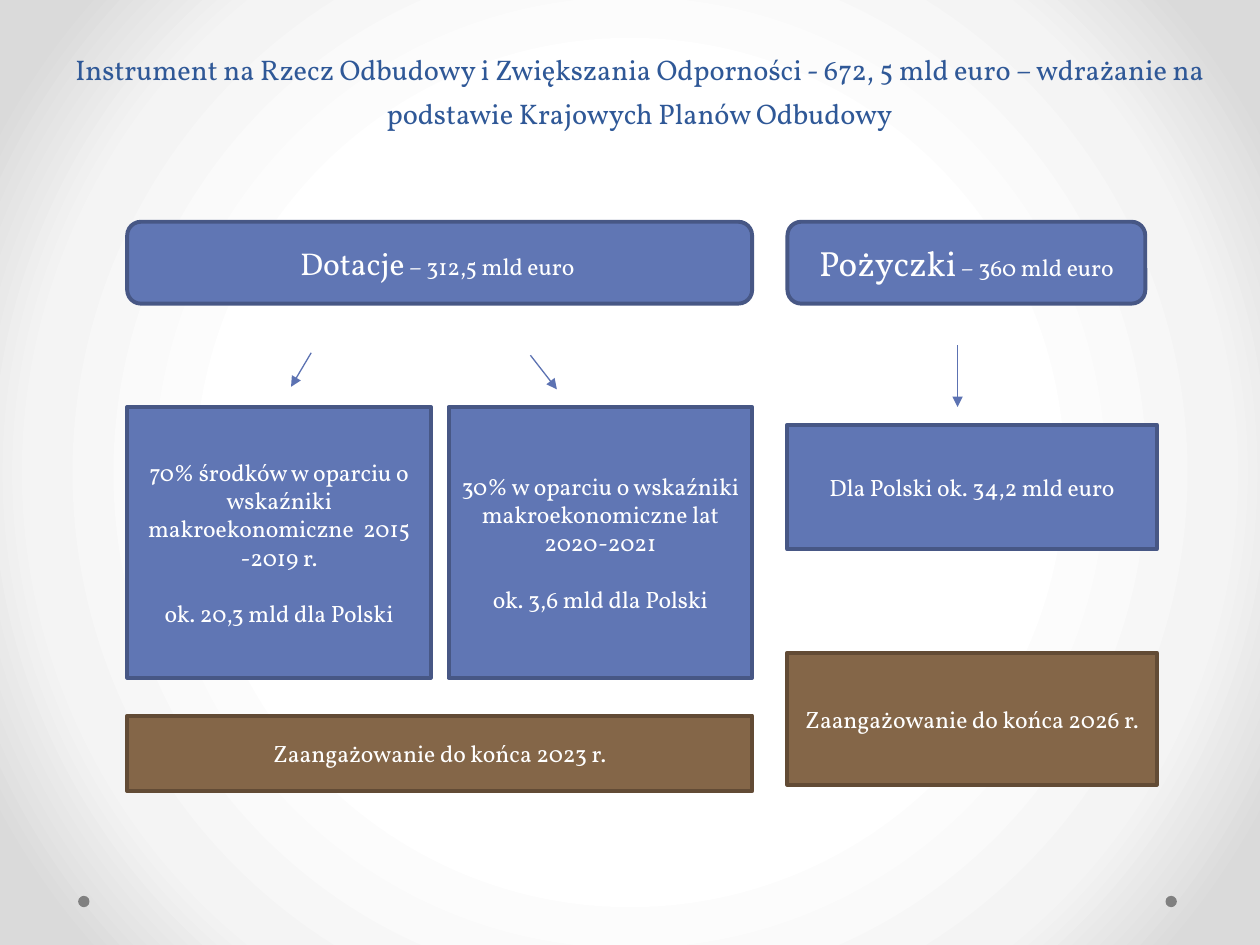
from pptx import Presentation
from pptx.dml.color import RGBColor
from pptx.enum.shapes import MSO_CONNECTOR as Conn, MSO_SHAPE as Shape
from pptx.enum.text import MSO_ANCHOR as Anchor, PP_ALIGN as Align
from pptx.oxml import parse_xml
from pptx.oxml.ns import nsdecls, qn
from pptx.util import Inches, Pt

BLUE, BLUE_EDGE = RGBColor(0x60, 0x76, 0xB4), RGBColor(0x47, 0x57, 0x85)
BROWN, BROWN_EDGE = RGBColor(0x84, 0x66, 0x48), RGBColor(0x62, 0x4B, 0x35)
ARROW = RGBColor(0x5C, 0x72, 0xB2)
TITLE = RGBColor(0x2F, 0x58, 0x97)
WHITE = RGBColor(0xFF, 0xFF, 0xFF)
GREY = RGBColor(0x80, 0x80, 0x80)
BG_STOPS = [(50, WHITE), (76, RGBColor(0xF4, 0xF4, 0xF4)),
            (92, RGBColor(0xDA, 0xDA, 0xDA))]
COLS, ROWS = 100, 75


class Deck:
    """Holds the style and the current slide; places are grid columns and rows."""
    font, size = "Vollkorn", 13.5

    def __init__(self, prs):
        self.s = prs.slides.add_slide(prs.slide_layouts[6])
        self.col, self.row = prs.slide_width / COLS, prs.slide_height / ROWS

    def grid(self, x, y, w, h):
        return [round(n * unit) for n, unit in
                zip((x, y, w, h), (self.col, self.row) * 2)]

    def background(self, stops):
        fill = self.s.background.fill
        fill.gradient()
        old = next(self.s.element.iter(qn("a:gradFill")))
        gs = "".join(f'<a:gs pos="{pos * 1000}"><a:srgbClr val="{c}"/></a:gs>'
                     for pos, c in stops)
        old.getparent().replace(old, parse_xml(
            f'<a:gradFill {nsdecls("a")} rotWithShape="1"><a:gsLst>{gs}</a:gsLst>'
            '<a:path path="circle"><a:fillToRect l="50000" t="50000" '
            'r="50000" b="50000"/></a:path></a:gradFill>'))

    def text(self, sp, paras, color=WHITE, anchor=Anchor.MIDDLE, **fmt):
        """Each paragraph is a list of (text, size) runs."""
        tf = sp.text_frame
        tf.word_wrap, tf.vertical_anchor = True, anchor
        for i, runs in enumerate(paras):
            p = tf.add_paragraph() if i else tf.paragraphs[0]
            # one line of air between paragraphs
            for key, value in {"alignment": Align.CENTER,
                               "space_before": Pt(16.2 if i else 0), **fmt}.items():
                setattr(p, key, value)
            for text, size in runs:
                r = p.add_run()
                r.text = text
                r.font.color.rgb = color
                for key, value in {"name": self.font, "size": Pt(size)}.items():
                    setattr(r.font, key, value)

    def title(self, at, text):
        sp = self.s.shapes.add_textbox(*self.grid(*at))
        self.text(sp, [[(text, 16.2)]], TITLE, Anchor.BOTTOM, line_spacing=Pt(25))

    def shape(self, kind, at, fill, edge=None):
        sp = self.s.shapes.add_shape(kind, *self.grid(*at))
        sp.shadow.inherit = False
        sp.fill.solid()
        sp.fill.fore_color.rgb = fill
        if edge is None:
            sp.line.fill.background()
        else:
            sp.line.color.rgb, sp.line.width = edge, Pt(2.25)
        return sp

    def box(self, at, *lines, colors=(BLUE, BLUE_EDGE)):
        self.text(self.shape(Shape.RECTANGLE, at, *colors),
                  [[(line, self.size)] for line in lines])

    def header(self, at, name, size, amount):
        self.text(self.shape(Shape.ROUNDED_RECTANGLE, at, BLUE, BLUE_EDGE),
                  [[(name, size), (amount, self.size)]])

    def arrow(self, *ends):
        c = self.s.shapes.add_connector(Conn.STRAIGHT, *self.grid(*ends))
        c.line.color.rgb, c.line.width = ARROW, Pt(0.75)
        sp_pr = c.element.spPr
        sp_pr.find(qn("a:ln")).append(
            parse_xml(f'<a:tailEnd {nsdecls("a")} type="triangle"/>'))
        sp_pr.append(parse_xml(f'<a:effectLst {nsdecls("a")}/>'))


def main():
    prs = Presentation()
    prs.slide_width, prs.slide_height = Inches(10), Inches(7.5)
    d = Deck(prs)
    brown = (BROWN, BROWN_EDGE)

    # Backdrop with two corner dots
    d.background(BG_STOPS)
    for x in (6.2, 92.5):
        d.shape(Shape.OVAL, (x, 71.1, 0.9, 0.9), GREY)

    d.title((2.8, 2.9, 95.9, 7.9),
            "Instrument na Rzecz Odbudowy i Zwiększania Odporności - 672, 5 mld euro "
            "– wdrażanie na podstawie Krajowych Planów Odbudowy")

    # Left and right branches share these edges
    grants_x, grants_w, half_w = 10.1, 49.6, 24.1
    loans_x, loans_w = 62.5, 29.3
    head_y, head_h = 17.6, 6.5

    # Grants
    d.header((grants_x, head_y, grants_w, head_h), "Dotacje", 18, " – 312,5 mld euro ")
    halves = [
        ("70% środków w oparciu o wskaźniki makroekonomiczne  2015 -2019 r.",
         "ok. 20,3 mld dla Polski"),
        ("30% w oparciu o wskaźniki makroekonomiczne lat 2020-2021",
         "ok. 3,6 mld dla Polski"),
    ]
    for i, lines in enumerate(halves):
        d.box((grants_x + i * (grants_w - half_w), 32.3, half_w, 21.5), *lines)
    d.box((grants_x, 56.8, grants_w, 6), "Zaangażowanie do końca 2023 r.", colors=brown)

    # Loans
    d.header((loans_x, head_y, 28.4, head_h), "Pożyczki", 20, " – 360 mld euro")
    d.box((loans_x, 33.7, loans_w, 9.9), "Dla Polski ok. 34,2 mld euro")
    d.box((loans_x, 51.8, loans_w, 10.5), "Zaangażowanie do końca 2026 r.", colors=brown)

    # Arrows from the headers down to the shares
    for ends in ((24.7, 28, 23.1, 30.7), (42.1, 28.2, 44.2, 30.9), (76, 27.4, 76, 32.3)):
        d.arrow(*ends)

    prs.save("out.pptx")


if __name__ == "__main__":
    main()
